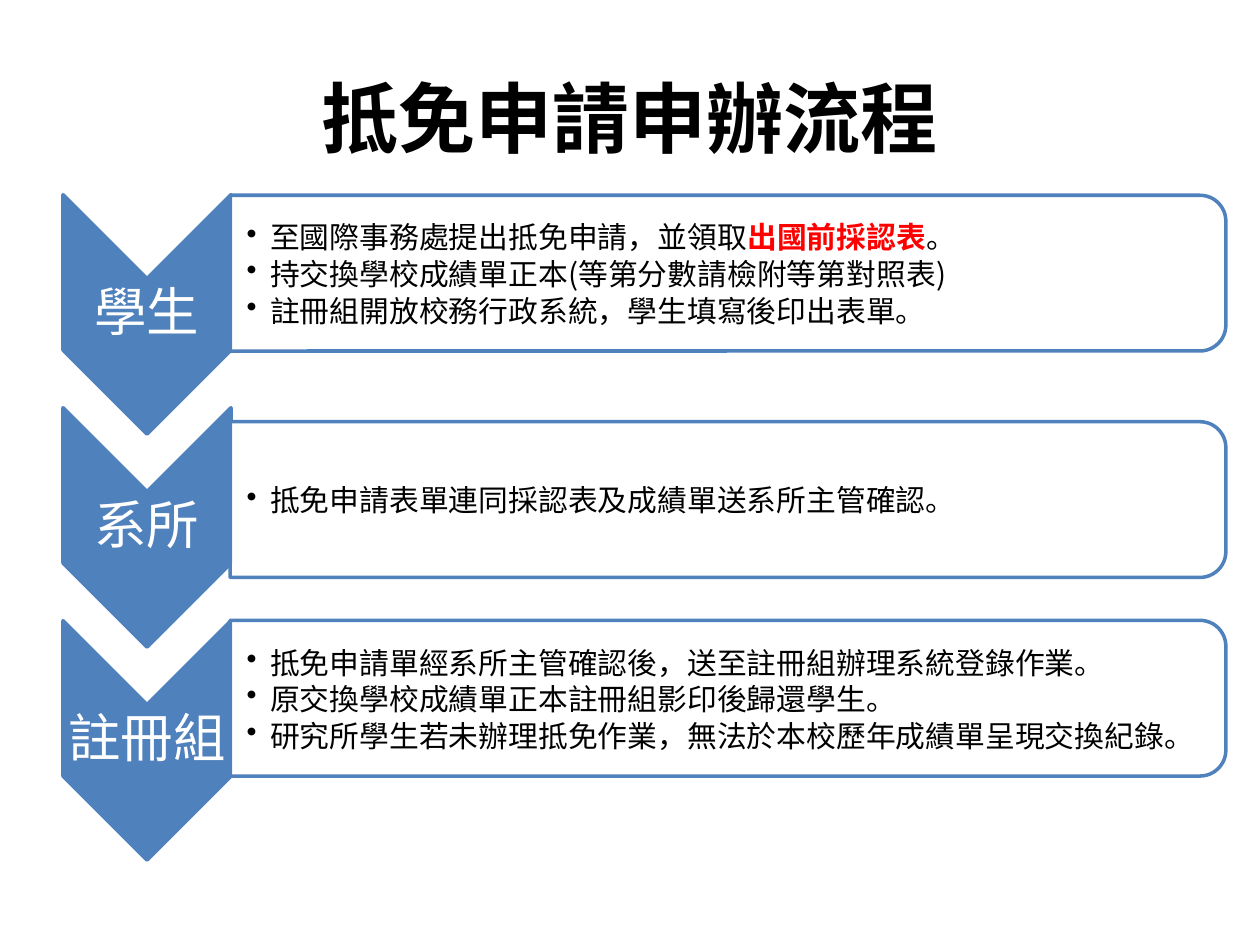
"""Build a slide with the three-stage procedure for credit transfer."""
from dataclasses import dataclass

from lxml import etree
from pptx import Presentation, dml, util as u
from pptx.dml import color
from pptx.enum import shapes, text
from pptx.oxml import ns

Pt = u.Pt


@dataclass
class Theme:
    blue = color.RGBColor(0x4F, 0x81, 0xBD)
    white = color.RGBColor(255, 255, 255)
    black = color.RGBColor(0, 0, 0)
    red = color.RGBColor(255, 0, 0)
    head = "Calibri"
    body = "Noto Sans CJK SC"
    title = Pt(44)
    label = Pt(30)
    note = Pt(17)


def block(kind, mid, top, wide, high, fill):
    """Add an upright preset, turned a quarter, around a centre line."""
    item = slide.shapes.add_shape(kind, Pt(mid - wide / 2), Pt(top), Pt(wide), Pt(high))
    item.rotation = 90
    item.shadow.inherit = False
    item.fill.solid()
    item.fill.fore_color.rgb = fill
    item.line.color.rgb = Theme.blue
    item.line.width = Pt(2)
    return item


def write(box, lines, size, face, tint, pads, bold=None):
    """Add a text box whose lines are lists of (words, stressed) pairs."""
    frame = slide.shapes.add_textbox(*[Pt(n) for n in box]).text_frame
    frame.word_wrap = True
    frame.vertical_anchor = text.MSO_ANCHOR.MIDDLE
    frame.margin_left, frame.margin_top, frame.margin_right, frame.margin_bottom = [
        Pt(n) for n in pads]
    for i, line in enumerate(lines):
        para = frame.add_paragraph() if i else frame.paragraphs[0]
        if size == Theme.note:
            props = para._p.get_or_add_pPr()
            props.set("marL", str(Pt(13.5)))
            props.set("indent", str(Pt(-13.5)))
            etree.SubElement(props, ns.qn("a:buChar")).set("char", "•")
            para.line_spacing = Pt(20.9)
        else:
            para.alignment = text.PP_ALIGN.CENTER
            para.line_spacing = 0.9 if size == Theme.label else 1
        font = para.font
        font.size, font.name, font.bold = size, face, bold
        font.color.rgb = tint
        for words, stress in line:
            run = para.add_run()
            run.text = words
            if stress:
                run.font.bold = True
                run.font.color.rgb = Theme.red


deck = Presentation()
deck.slide_width, deck.slide_height = Pt(720), Pt(540)
slide = deck.slides.add_slide(deck.slide_layouts[6])

write((36, 21.6, 648, 90), [[("抵免申請申辦流程", False)]],
      Theme.title, Theme.head, Theme.black, (7.2, 3.6, 7.2, 3.6), True)

stages = [
    ("學生", 156.1, [
        [("至國際事務處提出抵免申請，並領取", False), ("出國前採認表", True), ("。", False)],
        [("持交換學校成績單正本(等第分數請檢附等第對照表)", False)],
        [("註冊組開放校務行政系統，學生填寫後印出表單。", False)]]),
    ("系所", 285.5, [
        [("抵免申請表單連同採認表及成績單送系所主管確認。", False)]]),
    ("註冊組", 399, [
        [("抵免申請單經系所主管確認後，送至註冊組辦理系統登錄作業。", False)],
        [("原交換學校成績單正本註冊組影印後歸還學生。", False)],
        [("研究所學生若未辦理抵免作業，無法於本校歷年成績單呈現交換紀錄。", False)]]),
]
long, wide, step = 136.8, 96, 121.7
tall, span = 89, 569

for row, (name, mid, notes) in enumerate(stages):
    core = 179.7 + row * step
    block(shapes.MSO_SHAPE.CHEVRON, 84, core - wide / 2, long, wide, Theme.blue)
    write((36, core - 20.5, wide, 41), [[(name, False)]],
          Theme.label, Theme.body, Theme.white, (1.4,) * 4)
    panel = block(shapes.MSO_SHAPE.ROUND_2_SAME_RECTANGLE, 416, mid - span / 2,
                  tall, span, Theme.white)
    shade = panel._element.spPr.find(ns.qn("a:solidFill"))[0]
    etree.SubElement(shade, ns.qn("a:alpha")).set("val", "90000")
    write((131.5, mid - 40, 564.5, 80), notes,
          Theme.note, Theme.body, Theme.black, (9.4, 0.7, 0.7, 0.7))

deck.save("out.pptx")
